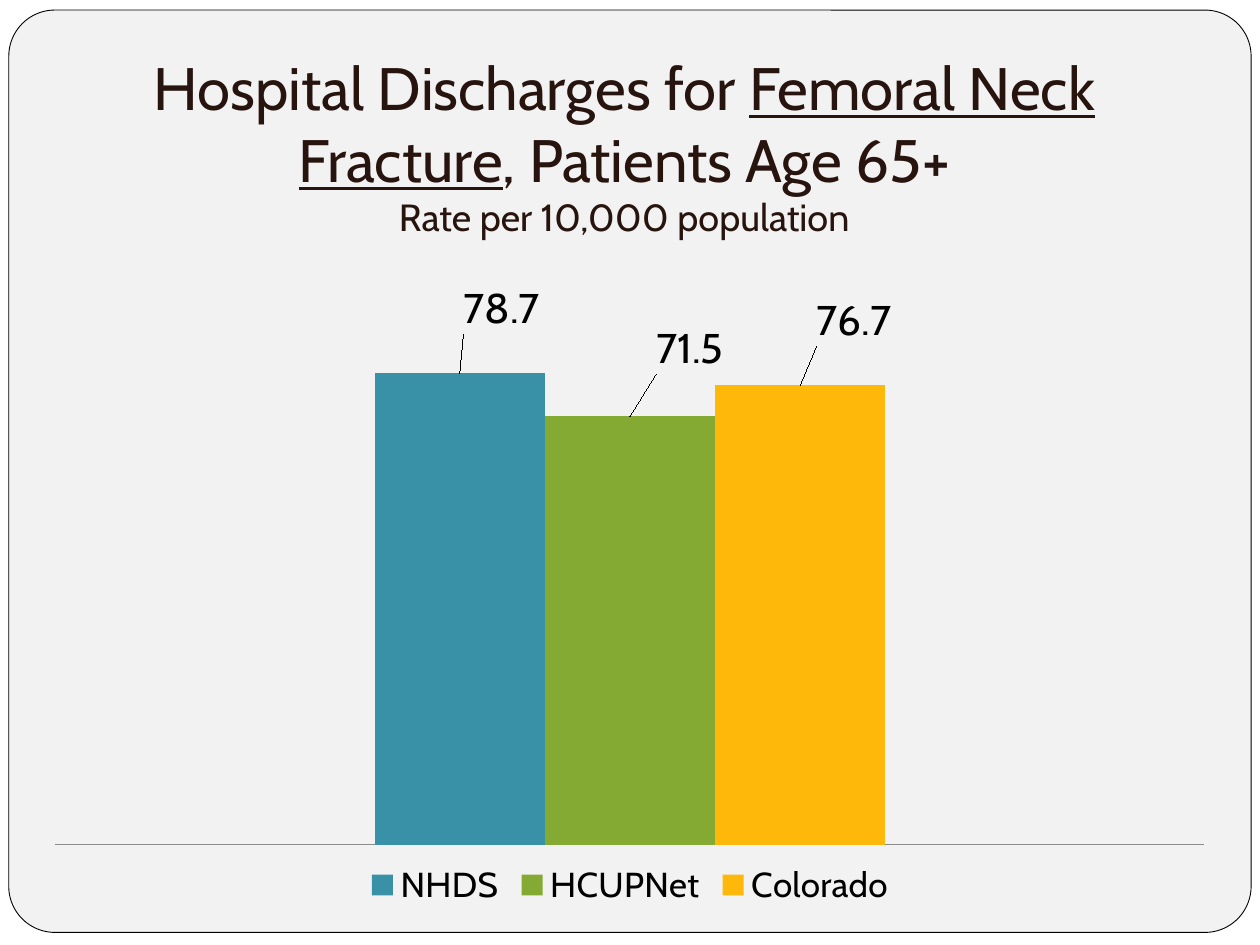
from dataclasses import dataclass

from lxml import etree
from pptx import Presentation
from pptx.chart.data import CategoryChartData
from pptx.dml.color import RGBColor
from pptx.enum.chart import XL_CHART_TYPE as ChartType
from pptx.enum.chart import XL_LABEL_POSITION as LabelPosition
from pptx.enum.chart import XL_LEGEND_POSITION as LegendPosition
from pptx.enum.chart import XL_TICK_LABEL_POSITION as TickLabels
from pptx.enum.chart import XL_TICK_MARK as TickMark
from pptx.enum.shapes import MSO_SHAPE as Shape
from pptx.enum.text import MSO_ANCHOR as Anchor
from pptx.enum.text import PP_ALIGN as Align
from pptx.oxml.ns import qn
from pptx.util import Inches, Pt


@dataclass(frozen=True)
class Theme:
    font: str = "Cabin"
    panel: RGBColor = RGBColor(0xF2, 0xF2, 0xF2)
    title: RGBColor = RGBColor(0x28, 0x14, 0x0E)
    ink: RGBColor = RGBColor(0, 0, 0)
    axis: RGBColor = RGBColor(0x8C, 0x8C, 0x8C)
    title_size: float = 34.2
    subtitle_size: float = 21.6
    chart_size: float = 18
    legend_size: float = 20
    label_size: float = 24


THEME = Theme()

# name, rate, colour, shift of the label as a share of the chart's size
SOURCES = [
    ("NHDS", 78.7, RGBColor(0x38, 0x91, 0xA7), (0.035, -0.055)),
    ("HCUPNet", 71.5, RGBColor(0x84, 0xAA, 0x33), (0.05, -0.06)),
    ("Colorado", 76.7, RGBColor(0xFE, 0xB8, 0x0A), (0.045, -0.055)),
]
TITLE = [
    [("Hospital Discharges for ", False), ("Femoral Neck Fracture", True),
     (", Patients Age 65+", False)],
    [("Rate per 10,000 population", False)],
]


def set_all(target, values):
    for name, value in values.items():
        setattr(target, name, value)


def set_font(font, size, color):
    set_all(font, {"name": THEME.font, "size": Pt(size)})
    font.color.rgb = color


def manual_layout(**values):
    """Return a c:layout element with the given entries, in schema order."""
    layout = etree.Element(qn("c:layout"))
    manual = etree.SubElement(layout, qn("c:manualLayout"))
    for name, value in values.items():
        etree.SubElement(manual, qn(f"c:{name}")).set("val", str(value))
    return layout


def add_panel(page, box):
    panel = page.shapes.add_shape(Shape.ROUNDED_RECTANGLE, *box)
    panel.shadow.inherit = False
    panel.adjustments[0] = 0.05
    panel.fill.solid()
    panel.fill.fore_color.rgb = THEME.panel
    panel.line.color.rgb = THEME.ink
    panel.line.width = Pt(0.5)


def add_title(page, box):
    frame = page.shapes.add_textbox(*box).text_frame
    set_all(frame, {
        "word_wrap": True, "vertical_anchor": Anchor.BOTTOM,
        "margin_left": Inches(0.1), "margin_right": Inches(0.1),
        "margin_top": Inches(0.05), "margin_bottom": Inches(0.1),
    })
    sizes = (THEME.title_size, THEME.subtitle_size)
    for index, (spans, size) in enumerate(zip(TITLE, sizes)):
        para = frame.add_paragraph() if index else frame.paragraphs[0]
        para.alignment = Align.CENTER
        for text, underlined in spans:
            span = para.add_run()
            span.text = text
            set_font(span.font, size, THEME.title)
            span.font.underline = underlined


def style_axes(chart):
    for axis in (chart.category_axis, chart.value_axis):
        set_all(axis, {
            "has_major_gridlines": False,
            "major_tick_mark": TickMark.NONE,
            "minor_tick_mark": TickMark.NONE,
            "tick_label_position": TickLabels.NONE,
        })
    set_all(chart.value_axis, {"minimum_scale": 0, "maximum_scale": 80})
    chart.value_axis.format.line.fill.background()
    chart.category_axis.format.line.color.rgb = THEME.axis
    chart.category_axis.format.line.width = Pt(0.75)


def style_series(series, color, shift):
    series.format.fill.solid()
    series.format.fill.fore_color.rgb = color
    label = series.points[0].data_label
    set_font(label.font, THEME.label_size, THEME.ink)
    label.position = LabelPosition.OUTSIDE_END
    entry = series.data_labels._element.find(qn("c:dLbl"))
    entry.find(qn("c:idx")).addnext(manual_layout(x=shift[0], y=shift[1]))
    set_font(series.data_labels.font, THEME.label_size, THEME.ink)
    series.data_labels.show_value = True


def add_rate_chart(page, box):
    data = CategoryChartData()
    data.categories = ["1"]
    for name, rate, *_ in SOURCES:
        data.add_series(name, [rate])
    chart = page.shapes.add_chart(
        ChartType.COLUMN_CLUSTERED, *box, data).chart
    set_all(chart, {"has_title": False, "has_legend": True})
    set_font(chart.font, THEME.chart_size, THEME.ink)
    set_all(chart.legend, {"position": LegendPosition.BOTTOM,
                           "include_in_layout": False})
    set_font(chart.legend.font, THEME.legend_size, THEME.ink)
    style_axes(chart)

    plot = chart.plots[0]
    set_all(plot, {"gap_width": 375, "overlap": 0, "vary_by_categories": False})
    for series, (_, _, color, shift) in zip(plot.series, SOURCES):
        style_series(series, color, shift)

    area = chart._chartSpace.chart.plotArea
    for layout in area.findall(qn("c:layout")):
        area.remove(layout)
    area.insert(0, manual_layout(
        layoutTarget="inner", xMode="edge", yMode="edge",
        x=0.02, y=0.12, w=0.96, h=0.77))


def main():
    deck = Presentation()
    deck.slide_width, deck.slide_height = Inches(10), Inches(7.5)
    page = deck.slides.add_slide(deck.slide_layouts[6])
    regions = [
        (add_panel, (0.07, 0.08, 9.86, 7.32)),
        (add_rate_chart, (0.25, 2.25, 9.5, 5)),
        (add_title, (0.33, 0.33, 9.25, 1.67)),
    ]
    for add_region, box in regions:
        add_region(page, [Inches(length) for length in box])
    deck.save("out.pptx")


if __name__ == "__main__":
    main()
